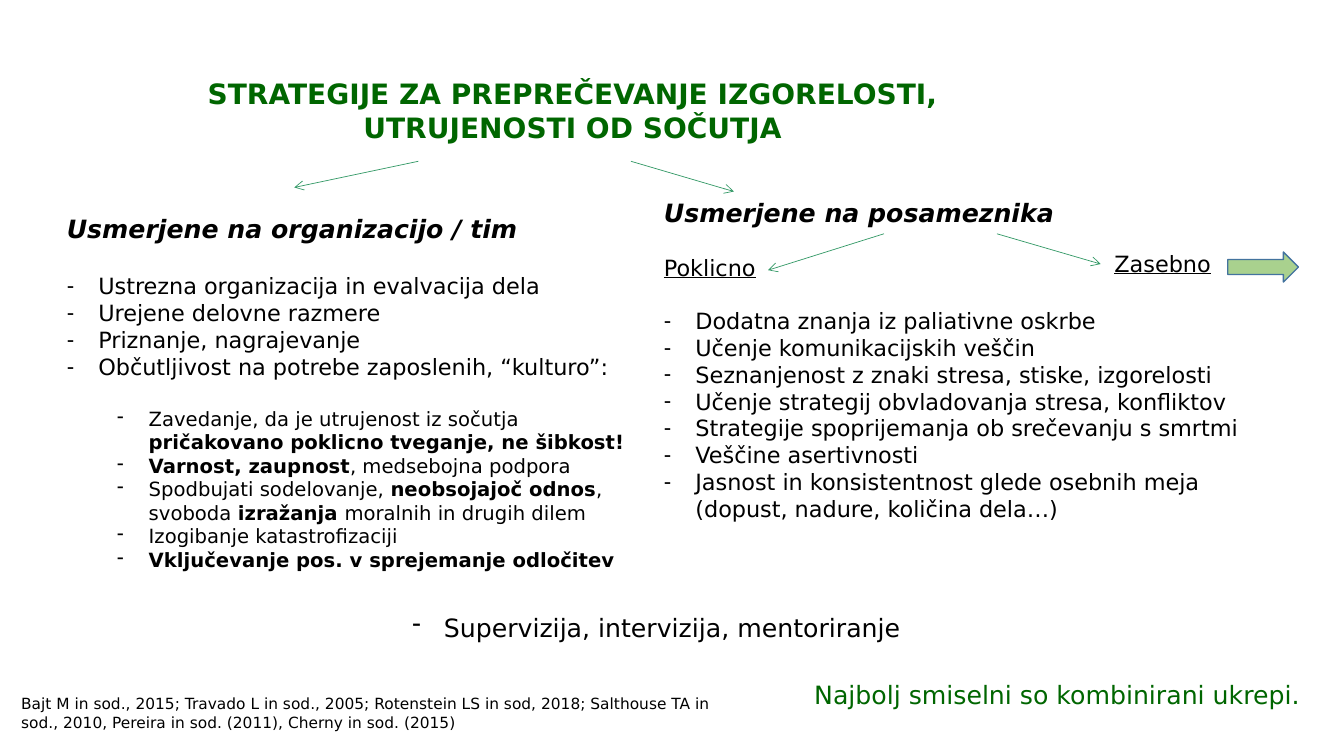
"""Builds a slide on strategies for preventing burnout and compassion fatigue."""
from pptx import Presentation
from pptx.dml.color import RGBColor
from pptx.enum.shapes import MSO_CONNECTOR, MSO_SHAPE
from pptx.enum.text import MSO_ANCHOR, MSO_AUTO_SIZE, PP_ALIGN
from pptx.oxml.ns import qn
from pptx.util import Pt
from lxml import etree

STRAIGHT = MSO_CONNECTOR.STRAIGHT
RIGHT_ARROW = MSO_SHAPE.RIGHT_ARROW
TOP = MSO_ANCHOR.TOP
NO_FIT = MSO_AUTO_SIZE.NONE
LEFT, CENTER = PP_ALIGN.LEFT, PP_ALIGN.CENTER

FONT = "DejaVu Sans"
COLORS = {"text": "000000", "accent": "006600", "line": "339966",
          "arrow": "A9D18E", "arrow_line": "43739E"}
HANG = 22.5

STYLES = {
    "title": {"size": 20, "color": "accent", "bold": True, "align": CENTER},
    "heading": {"size": 18, "bold": True, "italic": True},
    "label": {"size": 16, "underline": True},
    "item": {"size": 16, "indent": HANG},
    "subitem": {"size": 14, "indent": 58.5, "level": 1},
    "shared": {"size": 18, "indent": HANG},
    "closing": {"size": 18, "color": "accent"},
    "sources": {"size": 11},
}

TITLE = [("title", 0, "STRATEGIJE ZA PREPREČEVANJE IZGORELOSTI, UTRUJENOSTI OD SOČUTJA")]
ORGANISATION = [
    ("heading", 0, "Usmerjene na organizacijo / tim"),
    ("item", 21, "Ustrezna organizacija in evalvacija dela"),
    ("item", 0, "Urejene delovne razmere"),
    ("item", 0, "Priznanje, nagrajevanje"),
    ("item", 0, "Občutljivost na potrebe zaposlenih, “kulturo”:"),
    ("subitem", 19, [("Zavedanje, da je utrujenost iz sočutja ", False),
                     ("pričakovano poklicno tveganje, ne šibkost!", True)]),
    ("subitem", 0, [("Varnost, zaupnost", True), (", medsebojna podpora", False)]),
    ("subitem", 0, [("Spodbujati sodelovanje, ", False), ("neobsojajoč odnos", True),
                    (", svoboda ", False), ("izražanja ", True),
                    ("moralnih in drugih dilem", False)]),
    ("subitem", 0, "Izogibanje katastrofizaciji"),
    ("subitem", 0, [("Vključevanje pos. v sprejemanje odločitev", True)]),
]
INDIVIDUAL = [
    ("heading", 0, "Usmerjene na posameznika"),
    ("label", 19, "Poklicno"),
    ("item", 19, "Dodatna znanja iz paliativne oskrbe"),
    ("item", 0, "Učenje komunikacijskih veščin"),
    ("item", 0, "Seznanjenost z znaki stresa, stiske, izgorelosti"),
    ("item", 0, "Učenje strategij obvladovanja stresa, konfliktov"),
    ("item", 0, "Strategije spoprijemanja ob srečevanju s smrtmi"),
    ("item", 0, "Veščine asertivnosti"),
    ("item", 0, "Jasnost in konsistentnost glede osebnih meja (dopust, nadure, količina dela…)"),
]
PLACEHOLDERS = [
    ((106, 51, 606, 55.5), TITLE),
    ((40.5, 148.5, 425.5, 266.5), ORGANISATION),
    ((467, 137, 461, 242.5), INDIVIDUAL),
]
BOXES = [
    ((8, 492.5, 532, 34), [("sources", 0,
        "Bajt M in sod., 2015; Travado L in sod., 2005; Rotenstein LS in sod, 2018; "
        "Salthouse TA in sod., 2010, Pereira in sod. (2011), Cherny in sod. (2015)")]),
    ((574.5, 481.5, 376, 29), [("closing", 0, "Najbolj smiselni so kombinirani ukrepi.")]),
    ((287.5, 433.5, 425.5, 29), [("shared", 0, "Supervizija, intervizija, mentoriranje")]),
    ((789, 175, 88, 26.5), [("label", 0, "Zasebno")]),
]
BRANCHES = [
    (298.8, 115.2, 210.2, 133.9),
    (450.7, 115.2, 524.2, 136.8),
    (631.4, 167, 548.6, 193),
    (712.1, 167, 786.2, 188.6),
]
ONWARD_ARROW = (877, 180, 50.5, 21.5)


def rgb(name):
    return RGBColor.from_string(COLORS[name])


def set_bullet(p, indent):
    pPr = p._p.get_or_add_pPr()
    pPr.set("marL", str(Pt(indent)))
    pPr.set("indent", str(Pt(-HANG if indent else 0)))
    tags = [("a:buFontTx", {}), ("a:buChar", {"char": "-"})] if indent else [("a:buNone", {})]
    for tag, attrs in tags:
        bullet = etree.Element(qn(tag), attrs)
        pPr.insert_element_before(bullet, "a:tabLst", "a:defRPr", "a:extLst")


def write(tf, paragraphs):
    tf.word_wrap = True
    tf.auto_size = NO_FIT
    tf.vertical_anchor = TOP
    for i, (name, gap, text) in enumerate(paragraphs):
        style = STYLES[name]
        p = tf.add_paragraph() if i else tf.paragraphs[0]
        p.alignment = style.get("align", LEFT)
        p.level = style.get("level", 0)
        p.space_before = Pt(gap)
        p.font.name = FONT
        p.font.size = Pt(style["size"])
        p.font.color.rgb = rgb(style.get("color", "text"))
        p.font.bold = style.get("bold", False)
        p.font.italic = style.get("italic", False)
        p.font.underline = style.get("underline", False)
        set_bullet(p, style.get("indent", 0))
        if isinstance(text, str):
            p.add_run().text = text
            continue
        for part, bold in text:
            r = p.add_run()
            r.text = part
            r.font.bold = bold


def add_branch(s, ends):
    line = s.shapes.add_connector(STRAIGHT, *map(Pt, ends))
    line.line.color.rgb = rgb("line")
    line.line.width = Pt(0.5)
    etree.SubElement(line.line._get_or_add_ln(), qn("a:tailEnd"), type="arrow")
    etree.SubElement(line._element.spPr, qn("a:effectLst"))


def main():
    prs = Presentation()
    prs.slide_width, prs.slide_height = Pt(960), Pt(540)
    s = prs.slides.add_slide(prs.slide_layouts[3])

    for sp, (place, paragraphs) in zip(s.placeholders, PLACEHOLDERS):
        sp.left, sp.top, sp.width, sp.height = map(Pt, place)
        write(sp.text_frame, paragraphs)
    for place, paragraphs in BOXES:
        write(s.shapes.add_textbox(*map(Pt, place)).text_frame, paragraphs)
    for ends in BRANCHES:
        add_branch(s, ends)

    arrow = s.shapes.add_shape(RIGHT_ARROW, *map(Pt, ONWARD_ARROW))
    arrow.shadow.inherit = False
    arrow.fill.solid()
    arrow.fill.fore_color.rgb = rgb("arrow")
    arrow.line.color.rgb = rgb("arrow_line")
    arrow.line.width = Pt(1)

    prs.save("out.pptx")


if __name__ == "__main__":
    main()
